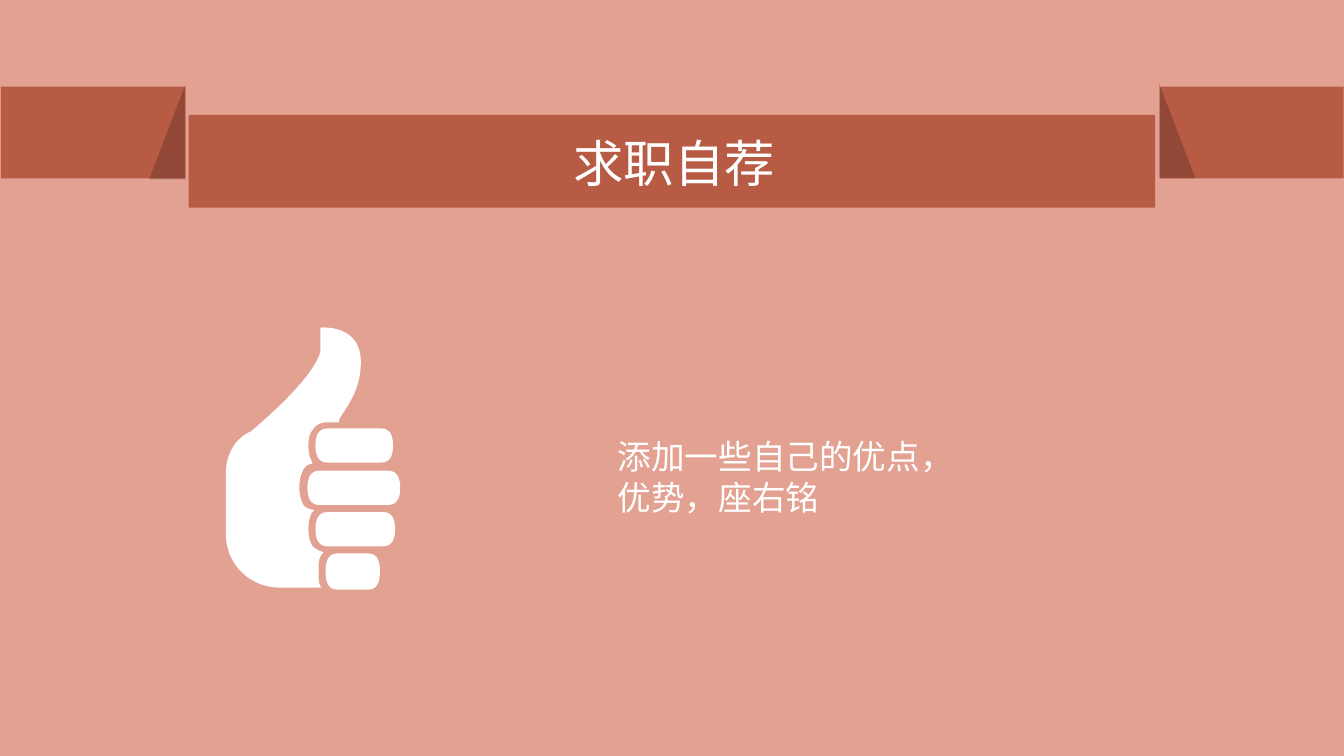
import pptx
import pptx.dml.color
import pptx.enum.shapes
import pptx.enum.text
import pptx.oxml.ns
import pptx.util
from lxml import etree

SLIDE_W, SLIDE_H = pptx.util.Inches(40 / 3), pptx.util.Inches(7.5)
ROWS = 750
UNIT = SLIDE_H // ROWS
THEME = {
    "back": "E3A192", "ribbon": "A9432B", "fold": "000000", "light": "FFFFFF",
    "ribbon_alpha": 74, "fold_alpha": 20,
    "font": "Noto Sans CJK SC", "title": 36, "body": 24,
}

TITLE = ("求职自荐", (559, 126, 234, 71))
BODY = ("添加一些自己的优点，优势，座右铭", (603, 428, 339, 91))
BANDS = [(187, 114, 959, 92), (1151, 86, 182, 91), (1, 86, 183, 91)]
FOLDS = [((1150, 83, 36, 94), False), ((148, 84, 36, 94), True)]
FINGERS = [(313, 425, 77, 34), (305, 467, 92, 34), (313, 508, 79, 34), (323, 549, 54, 36)]
FINGER_CORNER = 12
PALM_START = (318, 582)
PALM = [
    [(316, 579), (316, 573), (316, 567)], [(316, 560), (316, 555), (318, 552)],
    [(319, 551), (319, 549), (321, 548)], [(315, 546), (310, 543), (309, 540)],
    [(307, 536), (306, 532), (306, 524)], [(306, 518), (307, 514), (309, 509)],
    [(310, 508), (310, 508), (312, 506)], [(304, 505), (301, 502), (300, 499)],
    [(298, 494), (297, 490), (297, 483)], [(297, 477), (298, 472), (300, 468)],
    [(301, 465), (304, 460), (310, 460)], [(310, 459), (310, 459), (309, 457)],
    [(307, 454), (306, 448), (306, 443)], [(306, 435), (307, 431), (309, 428)],
    [(312, 423), (316, 419), (324, 419)], [(336, 419)],
    [(336, 411), (358, 394), (358, 359)], [(358, 321), (318, 325), (318, 325)],
    [(318, 325), (318, 336), (318, 349)], [(310, 376), (263, 416), (249, 428)],
    [(233, 435), (224, 451), (224, 471)], [(224, 529)],
    [(224, 560), (248, 583), (278, 583)], [(319, 583)],
    [(319, 583), (319, 582), (318, 582)],
]


def rgb(name):
    return pptx.dml.color.RGBColor.from_string(THEME[name])


def box(cells):
    return [c * UNIT for c in cells]


def paint(sp, color, alpha=100):
    sp.shadow.inherit = False
    sp.line.fill.background()
    sp.fill.solid()
    sp.fill.fore_color.rgb = rgb(color)
    if alpha < 100:
        clr = sp._element.spPr.find(".//" + pptx.oxml.ns.qn("a:srgbClr"))
        etree.SubElement(clr, pptx.oxml.ns.qn("a:alpha"), val=str(alpha * 1000))


def add_preset(shapes, kind, cells, color, flip=False):
    sp = shapes.add_shape(kind, *box(cells))
    paint(sp, color, THEME[color + "_alpha"])
    if flip:
        sp._element.spPr.find(pptx.oxml.ns.qn("a:xfrm")).set("flipH", "1")


def add_text(shapes, text, cells, *, size, color="light"):
    tf = shapes.add_textbox(*box(cells)).text_frame
    tf.word_wrap = True
    tf.auto_size = pptx.enum.text.MSO_AUTO_SIZE.SHAPE_TO_FIT_TEXT
    r = tf.paragraphs[0].add_run()
    r.text = text
    r.font.size = pptx.util.Pt(THEME[size])
    r.font.name = THEME["font"]
    r.font.color.rgb = rgb(color)
    etree.SubElement(r._r.get_or_add_rPr(), pptx.oxml.ns.qn("a:ea"), typeface=THEME["font"])


def add_outline(shapes, start, segments):
    ends = [seg[-1] for seg in segments]
    fb = shapes.build_freeform(*start, scale=UNIT)
    fb.add_line_segments(ends, close=True)
    sp = fb.convert_to_shape()
    paint(sp, "light")
    left, top = (min(axis) for axis in zip(start, *ends))
    lines = sp._element.spPr.findall(".//" + pptx.oxml.ns.qn("a:lnTo"))
    for line, seg in zip(lines, segments):
        if len(seg) == 3:
            line.tag = pptx.oxml.ns.qn("a:cubicBezTo")
            for i, (x, y) in enumerate(seg[:2]):
                pt = etree.Element(pptx.oxml.ns.qn("a:pt"), x=str(x - left), y=str(y - top))
                line.insert(i, pt)


def finger_segments(left, top, width, height):
    right, bottom, mid = left + width, top + height, top + height // 2
    c, q = FINGER_CORNER, height // 4
    return (left, mid), [
        [(left, mid + q), (left + 2, bottom), (left + c, bottom)],
        [(right - c, bottom)],
        [(right - 2, bottom), (right, mid + q), (right, mid)],
        [(right, mid - q), (right - 2, top), (right - c, top)],
        [(left + c, top)],
        [(left + 2, top), (left, mid - q), (left, mid)],
    ]


def main():
    prs = pptx.Presentation()
    prs.slide_width, prs.slide_height = SLIDE_W, SLIDE_H
    s = prs.slides.add_slide(prs.slide_layouts[6])
    s.background.fill.solid()
    s.background.fill.fore_color.rgb = rgb("back")

    kinds = pptx.enum.shapes.MSO_SHAPE
    for cells in BANDS:
        add_preset(s.shapes, kinds.RECTANGLE, cells, "ribbon")
    for cells, flip in FOLDS:
        add_preset(s.shapes, kinds.RIGHT_TRIANGLE, cells, "fold", flip)
    add_text(s.shapes, *TITLE, size="title")

    thumb = s.shapes.add_group_shape()
    for finger in FINGERS:
        add_outline(thumb.shapes, *finger_segments(*finger))
    add_outline(thumb.shapes, PALM_START, PALM)
    add_text(s.shapes, *BODY, size="body")
    prs.save("out.pptx")


if __name__ == "__main__":
    main()
